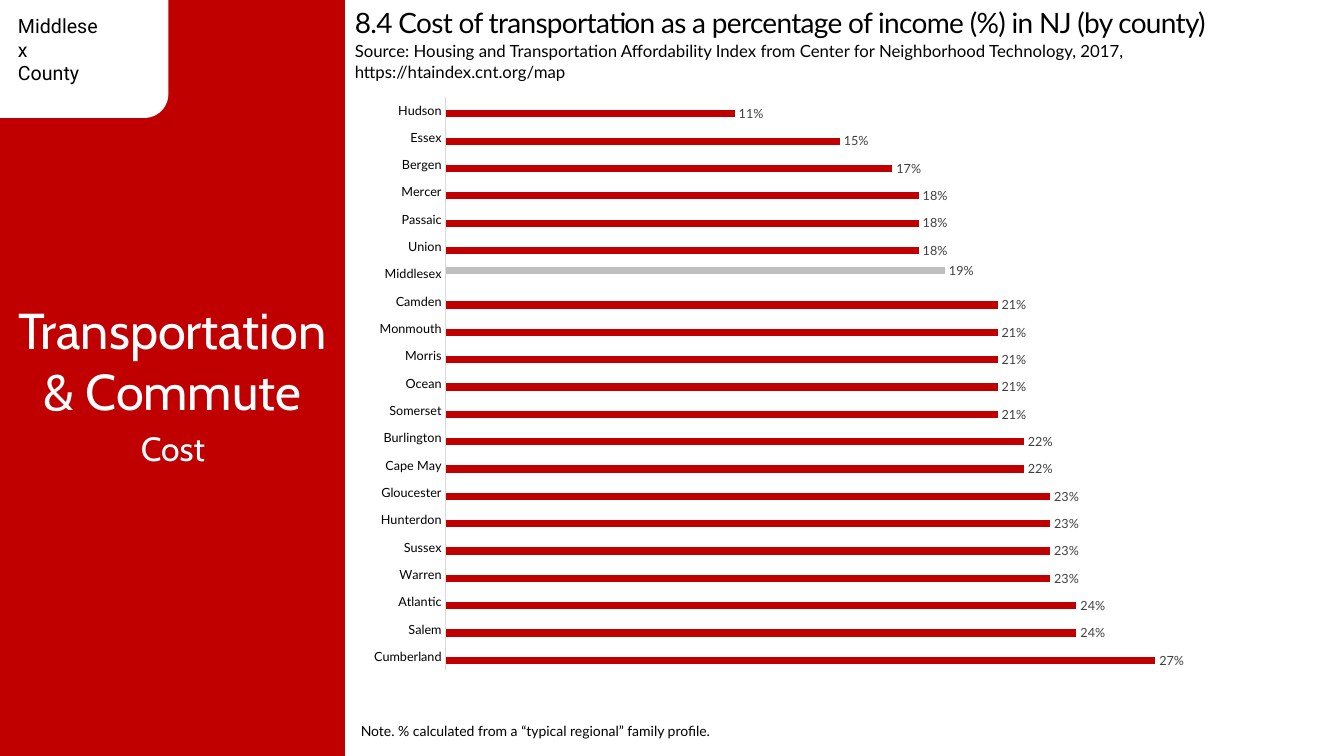
from dataclasses import dataclass

from lxml import etree
from pptx import Presentation
from pptx import util as u
from pptx.chart.data import CategoryChartData
from pptx.dml.color import RGBColor
from pptx.enum import chart as charts, shapes, text
from pptx.oxml import parse_xml
from pptx.oxml.ns import nsdecls, qn


@dataclass(frozen=True)
class Theme:
    """Colours, fonts and type sizes of the slide."""
    red: str = "C00000"
    grey: str = "BFBFBF"
    axis: str = "D9D9D9"
    label: str = "404040"
    black: str = "000000"
    white: str = "FFFFFF"
    body_font: str = "Lato"
    panel_font: str = "Cabin"
    county_font: str = "Roboto"
    chart_font: str = "Calibri"
    section: int = 36
    topic: int = 24
    title: int = 20
    county: int = 14
    source: int = 12
    note: int = 10
    chart: int = 10
    chart_label: int = 9


THEME = Theme()
HIGHLIGHT = "Middlesex"
COUNTY_COSTS = {
    "Cumberland": 0.27, "Salem": 0.24, "Atlantic": 0.24, "Warren": 0.23,
    "Sussex": 0.23, "Hunterdon": 0.23, "Gloucester": 0.23, "Cape May": 0.22,
    "Burlington": 0.22, "Somerset": 0.21, "Ocean": 0.21, "Morris": 0.21,
    "Monmouth": 0.21, "Camden": 0.21, "Middlesex": 0.19, "Union": 0.18,
    "Passaic": 0.18, "Mercer": 0.18, "Bergen": 0.17, "Essex": 0.15,
    "Hudson": 0.11,
}


def style_font(font, name, size, color):
    """Set typeface, size and colour of a font."""
    font.name = name
    font.size = u.Pt(size)
    font.color.rgb = RGBColor.from_string(color)


def place(shape, box):
    """Move and size a shape to a box in inches."""
    shape.left, shape.top, shape.width, shape.height = map(u.Inches, box)


def write(shape, lines, name, size, color, align=text.PP_ALIGN.LEFT,
          anchor=text.MSO_ANCHOR.TOP):
    """Fill a shape with evenly styled paragraphs."""
    frame = shape.text_frame
    frame.word_wrap = True
    frame.auto_size = text.MSO_AUTO_SIZE.NONE
    frame.vertical_anchor = anchor
    frame.text = "\n".join(lines)
    for paragraph in frame.paragraphs:
        paragraph.alignment = align
        style_font(paragraph.font, name, size, color)


def add_label(slide, box, lines, *style, **options):
    """Add a styled text box."""
    write(slide.shapes.add_textbox(*map(u.Inches, box)), lines, *style, **options)


def add_block(slide, kind, box, color):
    """Add a flat shape without outline."""
    shape = slide.shapes.add_shape(kind, *map(u.Inches, box))
    shape.shadow.inherit = False
    shape.fill.solid()
    shape.fill.fore_color.rgb = RGBColor.from_string(color)
    shape.line.fill.background()


def add_title(slide, title):
    """Place and format the slide title."""
    shape = slide.shapes.title
    place(shape, (3.42, 0, 9.86, 0.44))
    write(shape, [title], THEME.body_font, THEME.title, THEME.black)
    shape.text_frame.paragraphs[0].runs[0]._r.get_or_add_rPr().set("spc", "-50")


def style_series(series, color):
    """Colour a bar series and show its values."""
    series.format.fill.solid()
    series.format.fill.fore_color.rgb = RGBColor.from_string(color)
    labels = series.data_labels
    labels.show_value = True
    labels.position = charts.XL_LABEL_POSITION.OUTSIDE_END
    labels.number_format = "0%"
    labels.number_format_is_linked = False
    style_font(labels.font, THEME.body_font, THEME.chart_label, THEME.label)


def fix_plot_area(chart, **fractions):
    """Pin the inner plot area to fractions of the chart."""
    area = chart._chartSpace.chart.plotArea
    for old in area.findall(qn("c:layout")):
        area.remove(old)
    layout = parse_xml(
        f'<c:layout {nsdecls("c")}><c:manualLayout><c:layoutTarget val="inner"/>'
        '<c:xMode val="edge"/><c:yMode val="edge"/></c:manualLayout></c:layout>')
    for name, value in fractions.items():
        etree.SubElement(layout[0], qn(f"c:{name}")).set("val", str(value))
    area.insert(0, layout)


def add_cost_chart(slide, box):
    """Add the county bar chart with the highlighted county."""
    data = CategoryChartData(number_format="0%")
    data.categories = list(COUNTY_COSTS)
    for name, highlighted in (("Series 1", False), ("Series 2", True)):
        data.add_series(name, [cost if (county == HIGHLIGHT) == highlighted else None
                               for county, cost in COUNTY_COSTS.items()])
    chart = slide.shapes.add_chart(charts.XL_CHART_TYPE.BAR_CLUSTERED,
                                   *map(u.Inches, box), data).chart
    chart.has_legend = False
    chart.has_title = False
    style_font(chart.font, THEME.chart_font, THEME.chart, THEME.black)
    plot = chart.plots[0]
    plot.gap_width = 182
    plot.overlap = 0
    plot.vary_by_categories = False
    for series, color in zip(plot.series, (THEME.red, THEME.grey)):
        style_series(series, color)
    counties, costs = chart.category_axis, chart.value_axis
    counties.major_tick_mark = charts.XL_TICK_MARK.NONE
    counties.format.line.color.rgb = RGBColor.from_string(THEME.axis)
    counties.format.line.width = u.Pt(0.75)
    style_font(counties.tick_labels.font, THEME.body_font, THEME.chart_label, THEME.black)
    costs.minimum_scale, costs.maximum_scale = 0, 0.3
    costs.has_major_gridlines = False
    costs.visible = False
    fix_plot_area(chart, x=0.1, y=0.02, w=0.88, h=0.96)


def add_side_panel(slide):
    """Add the red panel with county tab, section and topic."""
    add_block(slide, shapes.MSO_SHAPE.RECTANGLE, (0, 0, 3.42, 7.5), THEME.red)
    add_block(slide, shapes.MSO_SHAPE.ROUNDED_RECTANGLE, (-0.33, -0.25, 2, 1.42),
              THEME.white)
    add_label(slide, (0.08, 0.09, 1, 0.57), ["Middlesex", "County"],
              THEME.county_font, THEME.county, THEME.black)
    add_label(slide, (0, 2.92, 3.42, 1.31), ["Transportation & Commute"],
              THEME.panel_font, THEME.section, THEME.white,
              align=text.PP_ALIGN.CENTER)
    add_label(slide, (0.64, 4.2, 2.15, 0.5), ["Cost"],
              THEME.panel_font, THEME.topic, THEME.white,
              align=text.PP_ALIGN.CENTER)


def main():
    """Build and save the slide."""
    presentation = Presentation()
    presentation.slide_width = u.Inches(13.33)
    presentation.slide_height = u.Inches(7.5)
    slide = presentation.slides.add_slide(presentation.slide_layouts[5])
    add_side_panel(slide)
    add_title(slide, "8.4 Cost of transportation as a percentage of income (%) "
                     "in NJ (by county)")
    add_label(slide, (3.42, 0.36, 9.19, 0.5),
              ["Source: Housing and Transportation Affordability Index from Center "
               "for Neighborhood Technology, 2017, https://htaindex.cnt.org/map"],
              THEME.body_font, THEME.source, THEME.black)
    add_cost_chart(slide, (3.53, 0.84, 8.89, 5.93))
    add_label(slide, (3.48, 7, 9, 0.5),
              ["Note. % calculated from a “typical regional” family profile."],
              THEME.body_font, THEME.note, THEME.black,
              align=text.PP_ALIGN.JUSTIFY, anchor=text.MSO_ANCHOR.MIDDLE)
    presentation.save("out.pptx")


if __name__ == "__main__":
    main()
